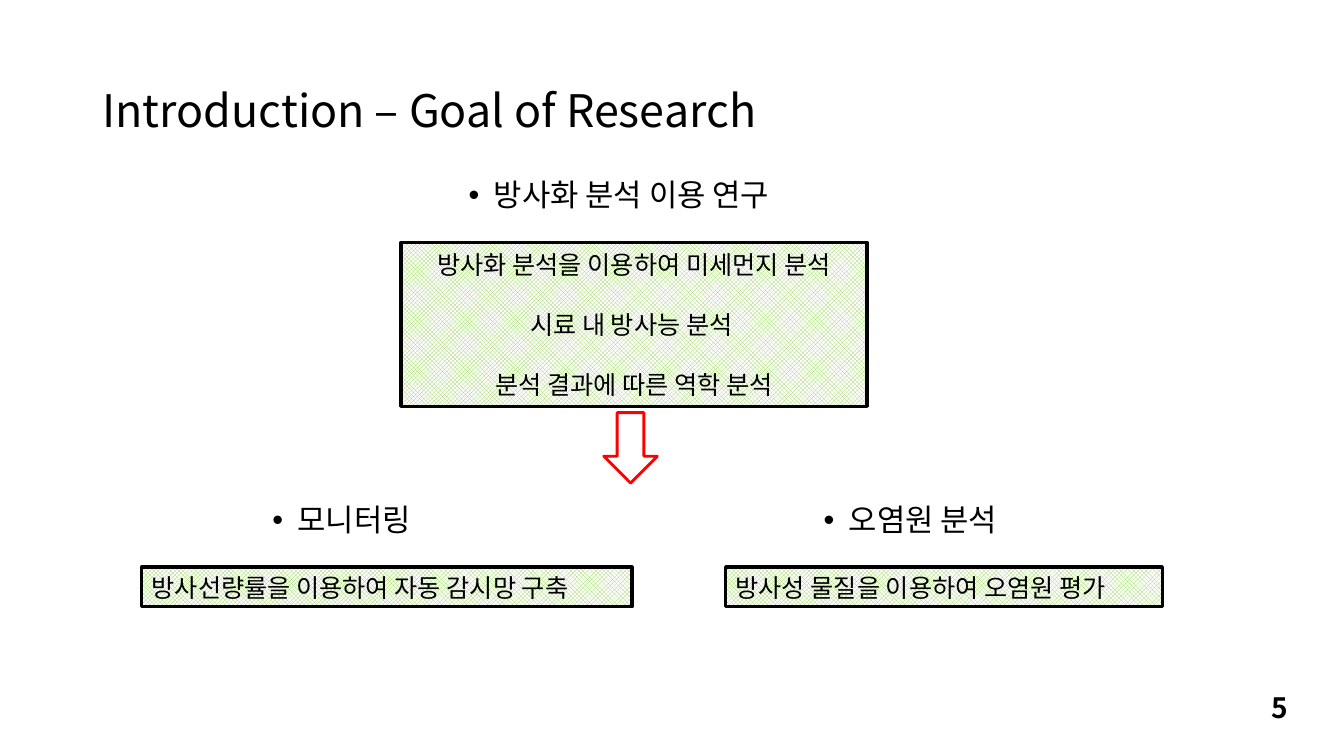
"""Build the research goal slide."""
from dataclasses import dataclass

from lxml import etree
from pptx import Presentation, util as u
from pptx.dml.color import RGBColor
from pptx.enum import dml, shapes, text
from pptx.oxml import ns

FONT = "Noto Sans CJK KR"
PX = 9525
LEFT, MID, RIGHT = text.PP_ALIGN.LEFT, text.PP_ALIGN.CENTER, text.PP_ALIGN.RIGHT


@dataclass
class Area:
    x: int
    y: int
    w: int
    h: int


@dataclass
class Head:
    area: Area
    words: str


@dataclass
class Panel:
    area: Area
    lines: list[str]
    align: text.PP_ALIGN = LEFT
    edge: float = 2.25


HEADS = [
    Head(Area(437, 167, 345, 41), "방사화 분석 이용 연구"),
    Head(Area(775, 476, 231, 41), "오염원 분석"),
    Head(Area(250, 476, 173, 41), "모니터링"),
]
PANELS = [
    Panel(Area(382, 231, 444, 156),
          ["방사화 분석을 이용하여 미세먼지 분석", "시료 내 방사능 분석 ", "분석 결과에 따른 역학 분석"],
          MID, 2.5),
    Panel(Area(135, 540, 467, 38), ["방사선량률을 이용하여 자동 감시망 구축"]),
    Panel(Area(691, 540, 416, 38), ["방사성 물질을 이용하여 오염원 평가"]),
]


def px(num: int) -> int:
    return u.Emu(num * PX)


def frame(area: Area) -> tuple:
    return px(area.x), px(area.y), px(area.w), px(area.h)


def tint(code: str) -> RGBColor:
    return RGBColor.from_string(code)


def write(shape, lines: list[str], *, size: int, bold: bool = False, align=LEFT,
          anchor=text.MSO_ANCHOR.MIDDLE, dot: bool = False, lead: float = 1, gap: float = 0) -> None:
    body = shape.text_frame
    body.word_wrap = True
    body.auto_size = text.MSO_AUTO_SIZE.NONE
    body.vertical_anchor = anchor
    for i, line in enumerate(lines):
        par = body.paragraphs[0] if i == 0 else body.add_paragraph()
        if dot:
            props = par._p.get_or_add_pPr()
            props.set("marL", str(px(24)))
            props.set("indent", str(-px(24)))
            etree.SubElement(props, ns.qn("a:buFont"), typeface="Arial")
            etree.SubElement(props, ns.qn("a:buChar"), char="•")
        par.alignment = align
        par.line_spacing = lead
        par.space_before = u.Pt(gap if i else 0)
        run = par.add_run()
        run.text = line
        font = run.font
        font.name, font.size, font.bold = FONT, u.Pt(size), bold
        font.color.rgb = tint("000000")
        etree.SubElement(run._r.get_or_add_rPr(), ns.qn("a:ea"), typeface=FONT)


def label(slide, area: Area, words: str, **form) -> None:
    write(slide.shapes.add_textbox(*frame(area)), [words], **form)


def solid(slide, kind, area: Area, edge: str, width: float):
    shape = slide.shapes.add_shape(kind, *frame(area))
    shape.shadow.inherit = False
    shape.line.color.rgb = tint(edge)
    shape.line.width = u.Pt(width)
    return shape


def panel(slide, item: Panel) -> None:
    shape = solid(slide, shapes.MSO_SHAPE.RECTANGLE, item.area, "000000", item.edge)
    shape.fill.patterned()
    shape.fill.pattern = dml.MSO_PATTERN.TRELLIS
    shape.fill.fore_color.rgb = tint("92D050")
    shape.fill.back_color.rgb = tint("FFFFFF")
    write(shape, item.lines, size=18, align=item.align, gap=21.6)


def main() -> None:
    deck = Presentation()
    deck.slide_width, deck.slide_height = px(1280), px(720)
    slide = deck.slides.add_slide(deck.slide_layouts[5])
    title = slide.shapes.title
    title.left, title.top, title.width, title.height = frame(Area(88, 38, 1104, 139))
    write(title, ["Introduction – Goal of Research"], size=32, lead=0.9)
    for head in HEADS:
        label(slide, head.area, head.words, size=22, dot=True, lead=0.9,
              anchor=text.MSO_ANCHOR.TOP)
    for item in PANELS:
        panel(slide, item)
    arrow = solid(slide, shapes.MSO_SHAPE.DOWN_ARROW, Area(575, 393, 51, 67), "FF0000", 2)
    arrow.fill.background()
    label(slide, Area(948, 655, 288, 38), "5", size=20, bold=True, align=RIGHT)
    deck.save("out.pptx")


if __name__ == "__main__":
    main()
